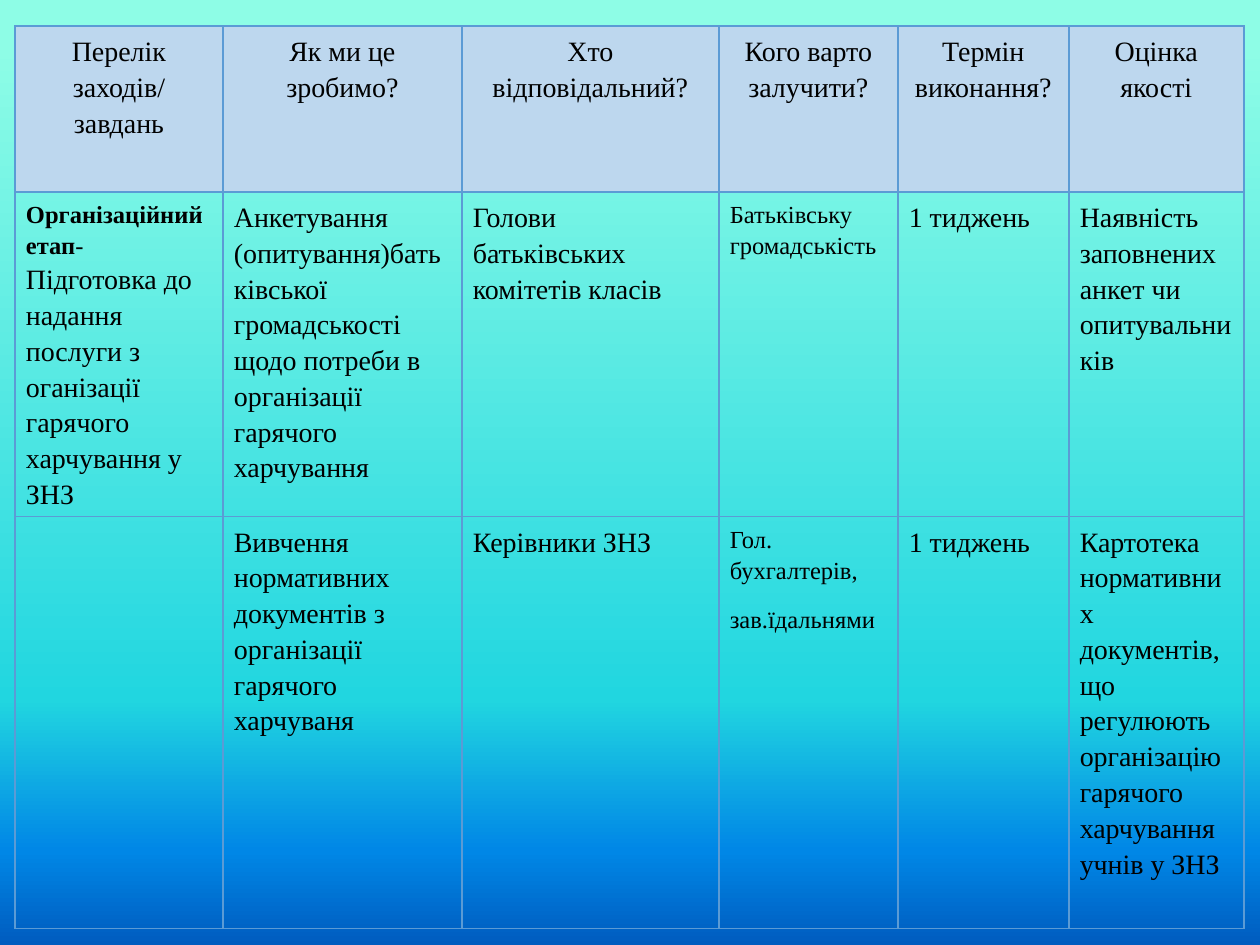
from lxml import etree
from pptx import Presentation
from pptx import util as u
from pptx.dml.color import RGBColor
from pptx.enum import text
from pptx.oxml import parse_xml
from pptx.oxml.ns import nsdecls, qn

# Content: a cell is a list of paragraphs, a paragraph a list of (text, style) runs
HEADERS = ["Перелік заходів/ завдань", "Як ми це зробимо?", "Хто відповідальний?",
           "Кого варто залучити?", "Термін виконання?", "Оцінка якості"]
ROWS = [
    [
        [[("Організаційний етап", "stage"), ("- ", "small"),
          ("Підготовка до надання послуги з оганізації гарячого харчування у ЗНЗ", "body")]],
        [[("Анкетування (опитування)батьківської громадськості щодо потреби "
           "в організації гарячого харчування", "body")]],
        [[("Голови батьківських комітетів класів", "body")]],
        [[("Батьківську громадськість", "small")]],
        [[("1 тиджень", "body")]],
        [[("Наявність заповнених анкет чи опитувальників", "body")]],
    ],
    [
        [],
        [[("Вивчення нормативних документів з організації гарячого харчуваня", "body")]],
        [[("Керівники ЗНЗ", "body")]],
        [[("Гол. бухгалтерів,", "small")], [("зав.їдальнями", "small")]],
        [[("1 тиджень", "body")]],
        [[("Картотека нормативних документів, що регулюють організацію "
           "гарячого харчування учнів у ЗНЗ", "body")]],
    ],
]

THEME = {
    "font": "Times New Roman", "ink": "000000",
    "header": "BDD7EE", "border": "5B9BD5", "border_pt": 1,
    "styles": {"body": (16, False), "small": (14, False), "stage": (14, True)},  # pt, bold
    "gradient": [(5, "8EFDE6"), (74, "21D6E0"), (90, "0087E6"), (100, "005CBF")],
}

# Layout in px
PX = u.Inches(1) // 126
LEFT, TOP = 15, 26
COLS = [208, 239, 257, 179, 171, 175]
HEIGHTS = [166, 315, 412]
PAD_X, PAD_Y = 11, 6


def set_background(slide):
    stops = "".join(f'<a:gs pos="{pos * 1000}"><a:srgbClr val="{color}"/></a:gs>'
                    for pos, color in THEME["gradient"])
    fill = slide.background.fill
    fill.gradient()
    fill.gradient_angle = 270  # top to bottom
    gs_list = slide.background._cSld.find(".//" + qn("a:gsLst"))
    gs_list.getparent().replace(
        gs_list, parse_xml(f'<a:gsLst {nsdecls("a")}>{stops}</a:gsLst>'))


def set_borders(cell):
    tc_pr = cell._tc.get_or_add_tcPr()
    for side in ("lnL", "lnR", "lnT", "lnB"):
        ln = etree.SubElement(tc_pr, qn(f"a:{side}"), w=str(u.Pt(THEME["border_pt"])))
        solid = etree.SubElement(ln, qn("a:solidFill"))
        etree.SubElement(solid, qn("a:srgbClr"), val=THEME["border"])


def write_cell(cell, paragraphs, header):
    cell.margin_left = cell.margin_right = PAD_X * PX
    cell.margin_top = cell.margin_bottom = PAD_Y * PX
    set_borders(cell)
    if header:
        cell.fill.solid()
        cell.fill.fore_color.rgb = RGBColor.from_string(THEME["header"])
    else:
        cell.fill.background()
    tf = cell.text_frame
    for i, runs in enumerate(paragraphs):
        p = tf.add_paragraph() if i else tf.paragraphs[0]
        p.alignment = text.PP_ALIGN.CENTER if header else text.PP_ALIGN.LEFT
        p.line_spacing = 1.15
        p.space_after = u.Pt(10)
        for words, style in runs:
            r = p.add_run()
            r.text = words
            size, r.font.bold = THEME["styles"][style]
            r.font.size = u.Pt(size)
            r.font.name = THEME["font"]
            r.font.color.rgb = RGBColor.from_string(THEME["ink"])


def main():
    prs = Presentation()
    prs.slide_width, prs.slide_height = u.Inches(10), u.Inches(7.5)
    s = prs.slides.add_slide(prs.slide_layouts[6])
    set_background(s)

    # Action plan table
    rows = [[[[(title, "body")]] for title in HEADERS]] + ROWS
    table = s.shapes.add_table(len(rows), len(COLS), LEFT * PX, TOP * PX,
                               sum(COLS) * PX, sum(HEIGHTS) * PX).table
    table.horz_banding = False
    for column, width in zip(table.columns, COLS):
        column.width = width * PX
    for i, (row, height) in enumerate(zip(table.rows, HEIGHTS)):
        row.height = height * PX
        for cell, paragraphs in zip(row.cells, rows[i]):
            write_cell(cell, paragraphs, header=i == 0)

    prs.save("out.pptx")


if __name__ == "__main__":
    main()
